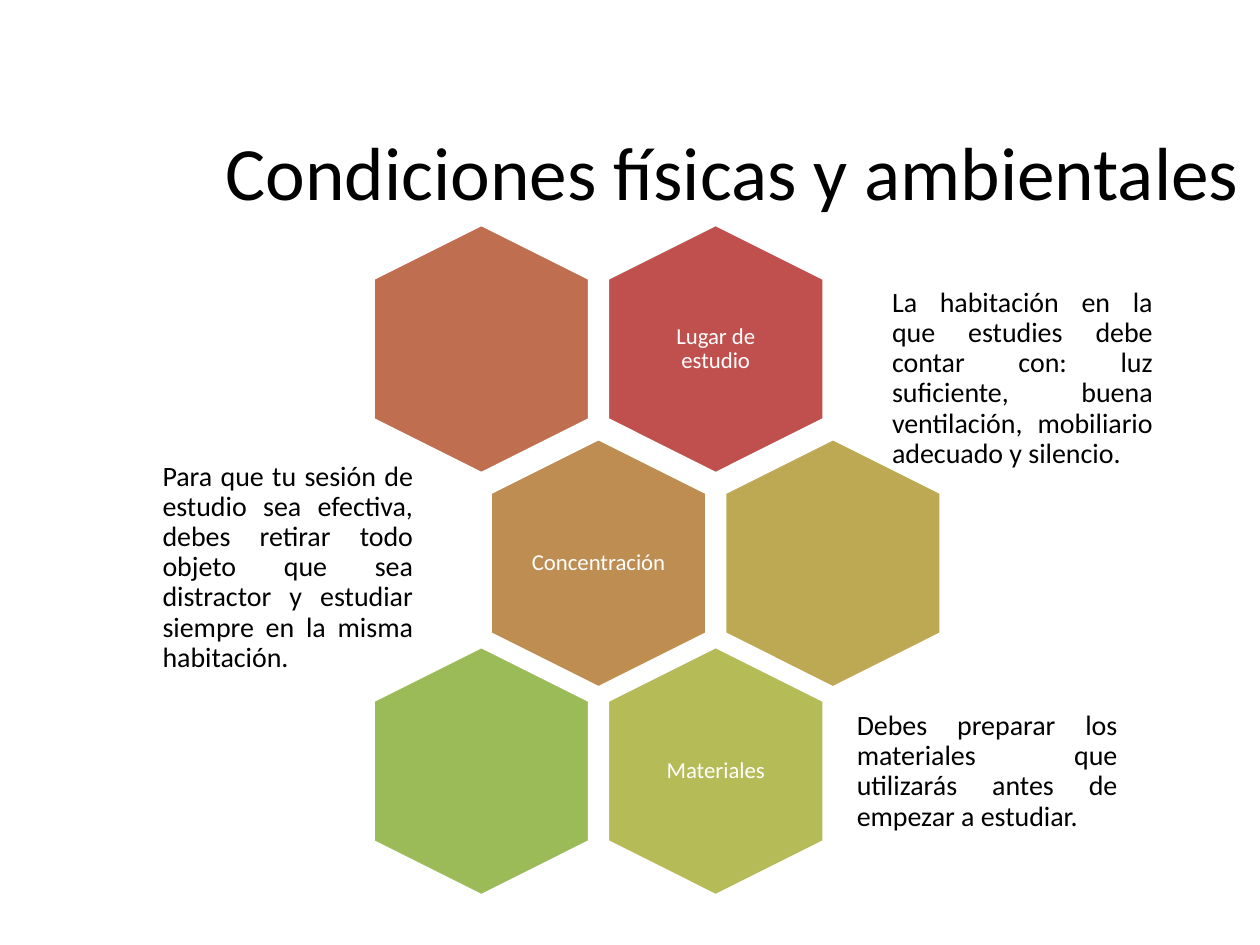
from pptx import Presentation
from pptx.dml.color import RGBColor
from pptx.enum.shapes import MSO_SHAPE
from pptx.enum.text import MSO_ANCHOR, MSO_AUTO_SIZE, PP_ALIGN
from pptx.util import Inches, Pt

# Content
TITLE = "Condiciones físicas y ambientales"
# Each row: centre of its left cell, then (colour, label) for both cells
ROWS = [
    (3.82, 2.77, [("BF6F4F", ""), ("C0504D", "Lugar de estudio")]),
    (4.75, 4.47, [("BE8D52", "Concentración"), ("BDA954", "")]),
    (3.82, 6.12, [("9BBB59", ""), ("B5BC57", "Materiales")]),
]
NOTES = [
    (7.01, 2.41, 2.21, "La habitación en la que estudies debe contar con: luz "
     "suficiente, buena ventilación, mobiliario adecuado y silencio."),
    (1.22, 3.91, 2.13, "Para que tu sesión de estudio sea efectiva, debes retirar todo "
     "objeto que sea distractor y estudiar siempre en la misma habitación."),
    (6.73, 5.53, 2.21, "Debes preparar los materiales que utilizarás antes de "
     "empezar a estudiar."),
]

# Sizes in inches
LONG, WIDE, STEP = 1.98, 1.72, 1.86
TAG_W, TAG_H, NOTE_H = 1.18, 1.36, 1.19

# Text formats
TAG = dict(size=13, color="FFFFFF", align=PP_ALIGN.CENTER, inset=0.05)
NOTE = dict(size=16, color="000000", align=PP_ALIGN.JUSTIFY, inset=0.07)


def paint(target, color):
    target.rgb = RGBColor.from_string(color)


def style(par, size, color):
    for key, val in dict(name="Calibri", size=Pt(size), bold=False).items():
        setattr(par.font, key, val)
    paint(par.font.color, color)


def add_hex(slide, x, y, color):
    cell = slide.shapes.add_shape(
        MSO_SHAPE.HEXAGON, Inches(x - LONG / 2), Inches(y - WIDE / 2),
        Inches(LONG), Inches(WIDE))
    cell.rotation = 90
    cell.adjustments[0] = 0.25
    cell.shadow.inherit = False
    cell.fill.solid()
    paint(cell.fill.fore_color, color)
    paint(cell.line.color, "FFFFFF")
    cell.line.width = Pt(2)


def add_text(slide, x, y, w, h, text, look):
    frame = slide.shapes.add_textbox(
        Inches(x), Inches(y), Inches(w), Inches(h)).text_frame
    frame.word_wrap = True
    frame.vertical_anchor = MSO_ANCHOR.MIDDLE
    for side in ("left", "top", "right", "bottom"):
        setattr(frame, "margin_" + side, Inches(look["inset"]))
    par = frame.paragraphs[0]
    par.text = text
    par.alignment = look["align"]
    par.line_spacing = 0.9
    style(par, look["size"], look["color"])


def add_title(slide):
    title = slide.shapes.title
    place = dict(left=1.69, top=0.94, width=8.66, height=0.84)
    for key, val in place.items():
        setattr(title, key, Inches(val))
    frame = title.text_frame
    frame.text = TITLE
    frame.word_wrap = False
    frame.auto_size = MSO_AUTO_SIZE.SHAPE_TO_FIT_TEXT
    frame.vertical_anchor = MSO_ANCHOR.TOP
    par = frame.paragraphs[0]
    par.alignment = PP_ALIGN.LEFT
    style(par, 43, "000000")


def main():
    deck = Presentation()
    deck.slide_width, deck.slide_height = Inches(10), Inches(7.5)
    slide = deck.slides.add_slide(deck.slide_layouts[5])
    add_title(slide)

    # Honeycomb with labels
    for left, y, cells in ROWS:
        for col, (color, label) in enumerate(cells):
            x = left + col * STEP
            add_hex(slide, x, y, color)
            if label:
                add_text(slide, x - TAG_W / 2, y - TAG_H / 2,
                         TAG_W, TAG_H, label, TAG)

    # Explanations beside the cells
    for x, y, w, text in NOTES:
        add_text(slide, x, y, w, NOTE_H, text, NOTE)

    deck.save("out.pptx")


if __name__ == "__main__":
    main()
